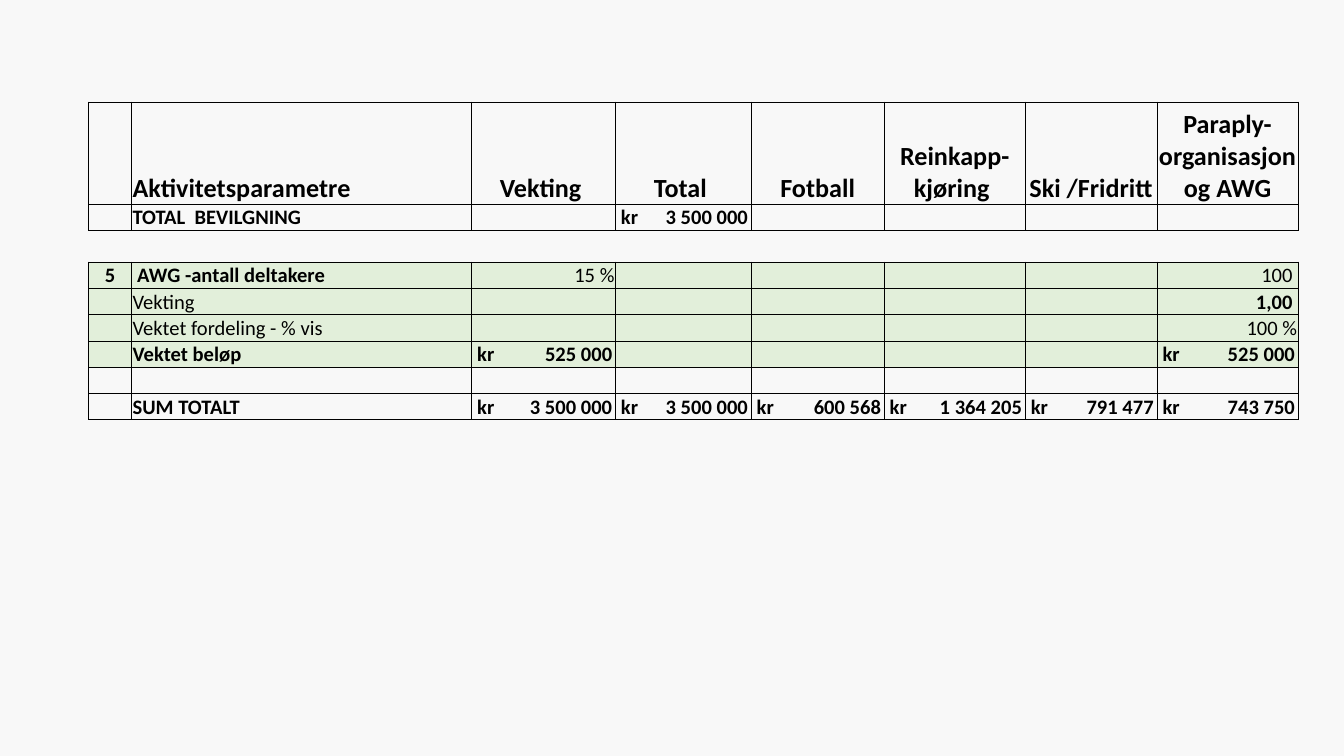
from lxml import etree
from pptx import Presentation
from pptx import util as u
from pptx.dml.color import RGBColor
from pptx.enum import text
from pptx.oxml import ns

COLORS = {"page": "F8F8F8", "ink": "000000", "green": "E2EFDA"}
COLS = [0.32, 2.53, 1.07, 1.01, 0.99, 1.05, 0.98, 1.05]
LEFT = 0.66
INSET = 0.5 / 72
ALIGN = {"l": text.PP_ALIGN.LEFT, "c": text.PP_ALIGN.CENTER, "r": text.PP_ALIGN.RIGHT}
HEADS = ["Aktivitetsparametre", "Vekting ", "Total ", "Fotball",
         "Reinkapp-kjøring ", "Ski /Fridritt", "Paraply-organisasjon og AWG"]
SUMS = ["3 500 000", "3 500 000", "600 568", "1 364 205", "791 477", "743 750"]


def rgb(name):
    return RGBColor.from_string(COLORS[name])


def add_sub(node, tag, **attrs):
    return etree.SubElement(node, ns.qn(tag), **attrs)


def add_border(cell):
    props = cell._tc.get_or_add_tcPr()
    for side in ("L", "R", "T", "B"):
        line = add_sub(props, f"a:ln{side}", w=str(u.Pt(0.5)))
        fill = add_sub(line, "a:solidFill")
        add_sub(fill, "a:srgbClr", val=COLORS["ink"])


def add_tab(para, place):
    tabs = add_sub(para._p.get_or_add_pPr(), "a:tabLst")
    add_sub(tabs, "a:tab", pos=str(u.Inches(place)), algn="r")


def write(cell, words, align, size, bold, width):
    para = cell.text_frame.paragraphs[0]
    if not words:
        add_sub(para._p, "a:endParaRPr", sz=str(size * 100))
        return
    if "\t" in words:
        add_tab(para, width - 0.03)
    para.alignment = ALIGN[align]
    run = para.add_run()
    run.text = words
    font = run.font
    font.name, font.size, font.bold = "Calibri", u.Pt(size), bold
    font.color.rgb = rgb("ink")


def style(cell, fill):
    cell.margin_left = cell.margin_right = cell.margin_top = u.Inches(INSET)
    cell.margin_bottom = 0
    cell.vertical_anchor = text.MSO_ANCHOR.BOTTOM
    add_border(cell)
    if fill:
        cell.fill.solid()
        cell.fill.fore_color.rgb = rgb(fill)
    else:
        cell.fill.background()


def add_grid(slide, top, highs, items, greens=0, head=False):
    frame = slide.shapes.add_table(
        len(highs), len(COLS), u.Inches(LEFT), u.Inches(top),
        u.Inches(sum(COLS)), u.Inches(sum(highs)))
    table = frame.table
    table.first_row = table.horz_banding = False
    for col, width in zip(table.columns, COLS):
        col.width = u.Inches(width)
    for r, high in enumerate(highs):
        table.rows[r].height = u.Inches(high)
        size = 14 if head and r == 0 else 11
        for c, width in enumerate(COLS):
            cell = table.cell(r, c)
            style(cell, "green" if r < greens else None)
            words, align, bold = items.get((r, c), ("", "l", True))
            write(cell, words, align, size, bold, width)


def money(value):
    return f" kr\t{value}", "l", True


def main():
    prs = Presentation()
    prs.slide_width, prs.slide_height = u.Inches(10), u.Inches(10 * 9 / 16)
    slide = prs.slides.add_slide(prs.slide_layouts[6])
    slide.background.fill.solid()
    slide.background.fill.fore_color.rgb = rgb("page")

    grant = {(0, c): (head, "l" if c == 1 else "c", True)
             for c, head in enumerate(HEADS, 1)}
    grant[1, 1] = ("TOTAL  BEVILGNING", "l", True)
    grant[1, 3] = money("3 500 000")
    add_grid(slide, 0.76, [0.76, 0.19], grant, head=True)

    share = {
        (0, 0): ("5", "c", True),
        (0, 1): (" AWG -antall deltakere", "l", True),
        (0, 2): ("15 %", "r", False),
        (0, 7): ("100 ", "r", False),
        (1, 1): ("Vekting", "l", False),
        (1, 7): ("1,00 ", "r", True),
        (2, 1): ("Vektet fordeling - % vis", "l", False),
        (2, 7): ("100 %", "r", False),
        (3, 1): ("Vektet beløp", "l", True),
        (3, 2): money("525 000"),
        (3, 7): money("525 000"),
        (5, 1): ("SUM TOTALT", "l", True),
    }
    share.update({(5, c): money(value) for c, value in enumerate(SUMS, 2)})
    add_grid(slide, 1.95, [0.19] * 6, share, greens=4)
    prs.save("out.pptx")


if __name__ == "__main__":
    main()
